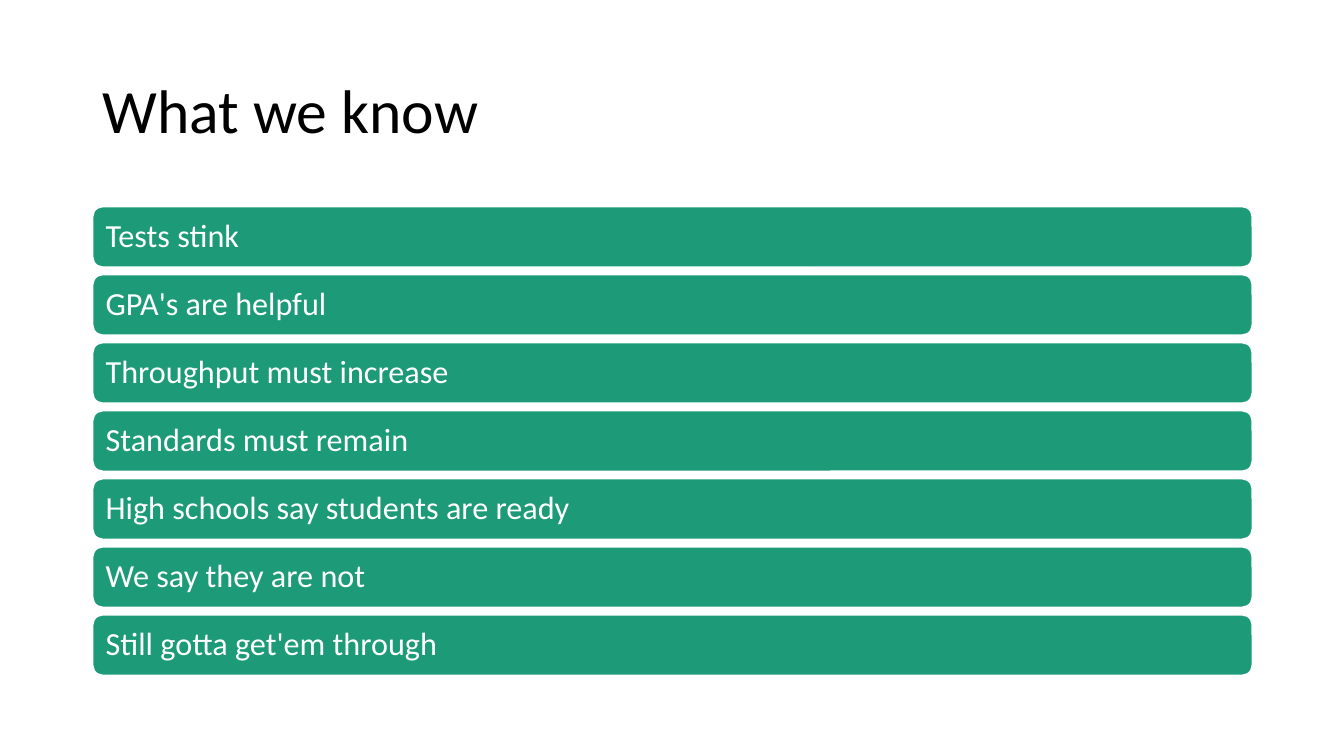
import pptx
import pptx.dml.color
import pptx.enum.shapes
import pptx.enum.text
import pptx.util
from pptx.util import Inches

BLACK = pptx.dml.color.RGBColor(0x00, 0x00, 0x00)
WHITE = pptx.dml.color.RGBColor(0xFF, 0xFF, 0xFF)
GREEN = pptx.dml.color.RGBColor(0x1D, 0x9A, 0x78)

TITLE_ONLY = 5
LEFT, WIDTH = 0.92, 11.5
FIRST_TOP, BAR_HEIGHT, BAR_PITCH = 2.05, 0.6, 0.675

STATEMENTS = [
    "Tests stink",
    "GPA's are helpful",
    "Throughput must increase",
    "Standards must remain",
    "High schools say students are ready",
    "We say they are not",
    "Still gotta get'em through",
]


def write_text(frame, text, *, size, color, font="Calibri", line_spacing=0.9):
    """Fill a text frame with one left-aligned, vertically centred paragraph."""
    frame.word_wrap = True
    frame.auto_size = pptx.enum.text.MSO_AUTO_SIZE.NONE
    frame.vertical_anchor = pptx.enum.text.MSO_ANCHOR.MIDDLE
    paragraph = frame.paragraphs[0]
    paragraph.alignment = pptx.enum.text.PP_ALIGN.LEFT
    paragraph.line_spacing = line_spacing
    run = paragraph.add_run()
    run.text = text
    run.font.name = font
    run.font.size = pptx.util.Pt(size)
    run.font.color.rgb = color


class StatementSlide:
    title_size = 44
    statement_size = 23
    bar_inset = Inches(0.1)

    def __init__(self, presentation):
        layout = presentation.slide_layouts[TITLE_ONLY]
        self.slide = presentation.slides.add_slide(layout)

    def add_title(self, text):
        heading = self.slide.shapes.title
        heading.left, heading.top = Inches(LEFT), Inches(0.4)
        heading.width, heading.height = Inches(WIDTH), Inches(1.45)
        write_text(heading.text_frame, text, size=self.title_size, color=BLACK)

    def add_bar(self, text, top):
        bar = self.slide.shapes.add_shape(
            pptx.enum.shapes.MSO_SHAPE.ROUNDED_RECTANGLE,
            Inches(LEFT), Inches(top), Inches(WIDTH), Inches(BAR_HEIGHT))
        bar.shadow.inherit = False
        bar.fill.solid()
        bar.fill.fore_color.rgb = GREEN
        bar.line.color.rgb = WHITE
        bar.line.width = pptx.util.Pt(1)
        frame = bar.text_frame
        frame.margin_left = frame.margin_right = self.bar_inset
        frame.margin_top = frame.margin_bottom = self.bar_inset
        write_text(frame, text, size=self.statement_size, color=WHITE)


def main():
    presentation = pptx.Presentation()
    presentation.slide_width = Inches(13.33)
    presentation.slide_height = Inches(7.5)

    what_we_know = StatementSlide(presentation)
    what_we_know.add_title("What we know")
    for row, statement in enumerate(STATEMENTS):
        what_we_know.add_bar(statement, FIRST_TOP + row * BAR_PITCH)

    presentation.save("out.pptx")


if __name__ == "__main__":
    main()
